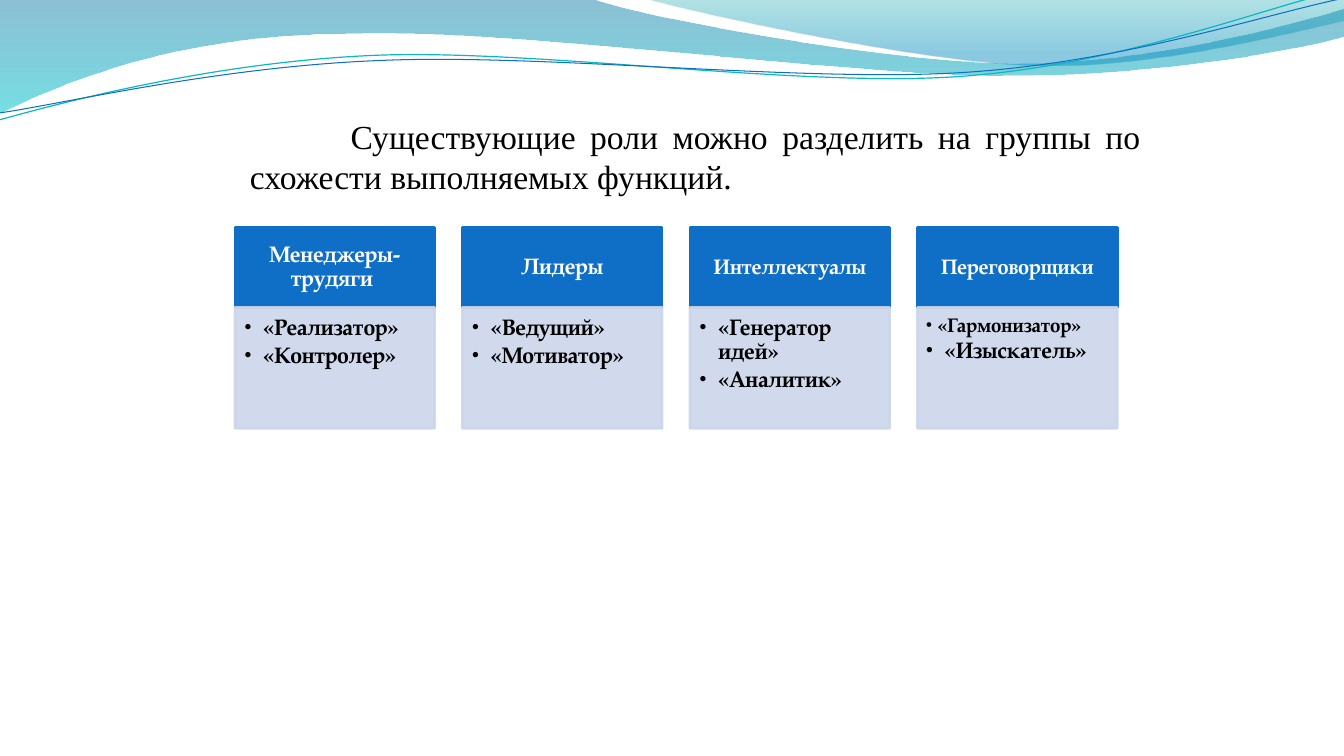
from lxml import etree
from pptx import Presentation, util as u
from pptx.dml.color import RGBColor
from pptx.enum import shapes, text
from pptx.oxml import ns

BLUE = RGBColor(0x0F, 0x6F, 0xC6)
PALE = RGBColor(0xCC, 0xD5, 0xEA)
TEAL_LINE = RGBColor(0x0A, 0xB8, 0xBF)
DEEP_BLUE = RGBColor(0x00, 0x74, 0xA1)
TURQUOISE = RGBColor(0x00, 0xC6, 0xCF)
TEAL = RGBColor(0x00, 0xA1, 0xA9)
SKY = RGBColor(0x00, 0x8B, 0xBF)
BLACK = RGBColor(0, 0, 0)
WHITE = RGBColor(255, 255, 255)

SERIF = "Times New Roman"
PALATINO = "TeX Gyre Pagella"

GRID_LEFT, GRID_WIDTH, COLUMN_WIDTH = 2.33, 8.75, 1.98
HEADER_TOP, HEADER_HEIGHT, BODY_HEIGHT = 2.26, 0.79, 1.2

WIDE_WAVE = [
    (0, -0.01), (5.87, -0.01),
    (6.34, 0.17, 8.85, 0.63, 10.11, 0.63), (11.38, 0.63, 12.78, 0.26, 13.33, 0.09),
    (13.35, 0.36),
    (13.11, 0.44, 11.6, 0.76, 9.94, 0.75), (8.29, 0.75, 5.09, 0.28, 3.43, 0.34),
    (1.72, 0.35, 0.61, 0.83, -0.01, 1.13),
]
RIGHT_WAVE = [
    (6.39, -0.01),
    (6.79, 0.11, 9.09, 0.62, 10.25, 0.65), (11.41, 0.69, 12.82, 0.32, 13.33, 0.21),
    (13.33, 0),
]
TEAL_CURVE = [
    (-0.01, 1.19), (0.64, 1.01, 2.11, 0.62, 3.69, 0.55),
    (5.27, 0.48, 7.9, 0.87, 9.5, 0.76), (11.1, 0.65, 12.52, 0.08, 13.31, -0.1),
]
BLUE_CURVE = [
    (0, 1.12), (0.63, 1.03, 2.18, 0.66, 3.78, 0.6),
    (5.37, 0.53, 7.96, 0.82, 9.55, 0.72), (11.15, 0.62, 12.55, 0.14, 13.34, -0.02),
]

GROUPS = [
    ("Менеджеры-трудяги ", 16, 0.09, [("«Реализатор»", 16, 0.19), ("«Контролер»", 16, 0.19)]),
    ("Лидеры", 16, 0.09, [("«Ведущий»", 16, 0.19), ("«Мотиватор»", 16, 0.19)]),
    ("Интеллектуалы", 15, 0.09, [("«Генератор идей»", 16, 0.19), ("«Аналитик»", 16, 0.19)]),
    ("Переговорщики", 15, 0.08, [("«Гармонизатор»", 14, 0.12), ("«Изыскатель»", 16, 0.19)]),
]


def set_opacity(shape, percentages):
    colors = shape.element.spPr.iter(ns.qn("a:srgbClr"))
    for color, percent in zip(colors, percentages):
        etree.SubElement(color, ns.qn("a:alpha")).set("val", str(percent * 1000))


def bend_segment(line, shape, segment):
    line.tag = ns.qn("a:cubicBezTo")
    end = line[0]
    for x, y in (segment[:2], segment[2:4]):
        control = etree.Element(ns.qn("a:pt"))
        control.set("x", str(u.Inches(x) - shape.left))
        control.set("y", str(u.Inches(y) - shape.top))
        end.addprevious(control)


def add_outline(slide, outline, close):
    points = [(u.Inches(segment[-2]), u.Inches(segment[-1])) for segment in outline]
    builder = slide.shapes.build_freeform(*points[0])
    builder.add_line_segments(points[1:], close=close)
    shape = builder.convert_to_shape()
    shape.shadow.inherit = False
    lines = list(shape.element.spPr.iter(ns.qn("a:lnTo")))
    for line, segment in zip(lines, outline[1:]):
        if len(segment) == 6:
            bend_segment(line, shape, segment)
    return shape


def add_wave(slide, outline, stops):
    shape = add_outline(slide, outline, True)
    shape.line.fill.background()
    shape.fill.gradient()
    shape.fill.gradient_angle = 270
    for stop, (position, color, _) in zip(shape.fill.gradient_stops, stops):
        stop.position = position
        stop.color.rgb = color
    set_opacity(shape, [opacity for _, _, opacity in stops])


def add_curve(slide, outline, color, width):
    shape = add_outline(slide, outline, False)
    shape.fill.background()
    shape.line.color.rgb = color
    shape.line.width = u.Pt(width)


def format_runs(paragraph, font_name, size, color, bold):
    for run in paragraph.runs:
        run.font.name = font_name
        run.font.size = u.Pt(size)
        run.font.color.rgb = color
        run.font.bold = bold


def set_indent(paragraph, left, first):
    properties = paragraph._p.get_or_add_pPr()
    properties.set("marL", str(u.Inches(left)))
    properties.set("indent", str(u.Inches(first)))
    return properties


def add_bullet(paragraph, indent):
    properties = set_indent(paragraph, indent, -indent)
    etree.SubElement(properties, ns.qn("a:buFont")).set("typeface", SERIF)
    etree.SubElement(properties, ns.qn("a:buChar")).set("char", "•")


def add_intro(slide):
    box = slide.shapes.add_textbox(u.Inches(2.08), u.Inches(0.17), u.Inches(9.33), u.Inches(6.42))
    frame = box.text_frame
    frame.word_wrap = True
    frame.margin_top = u.Inches(0.98)
    frame.text = "Существующие роли можно разделить на группы по схожести выполняемых функций. "
    paragraph = frame.paragraphs[0]
    set_indent(paragraph, 0.3, 1)
    paragraph.alignment = text.PP_ALIGN.JUSTIFY
    format_runs(paragraph, SERIF, 24, BLACK, False)


def add_block(slide, left, top, height, color, insets):
    shape = slide.shapes.add_shape(
        shapes.MSO_SHAPE.RECTANGLE,
        u.Inches(left), u.Inches(top), u.Inches(COLUMN_WIDTH), u.Inches(height))
    shape.shadow.inherit = False
    shape.fill.solid()
    shape.fill.fore_color.rgb = color
    shape.line.color.rgb = color
    shape.line.width = u.Pt(2)
    frame = shape.text_frame
    frame.word_wrap = True
    frame.margin_left, frame.margin_top, frame.margin_right, frame.margin_bottom = map(u.Inches, insets)
    return shape


def add_header(slide, left, title, size):
    shape = add_block(slide, left, HEADER_TOP, HEADER_HEIGHT, BLUE, (0.12, 0.07, 0.12, 0.07))
    shape.text_frame.vertical_anchor = text.MSO_ANCHOR.MIDDLE
    shape.text_frame.text = title
    paragraph = shape.text_frame.paragraphs[0]
    paragraph.alignment = text.PP_ALIGN.CENTER
    paragraph.line_spacing = 0.9
    format_runs(paragraph, PALATINO, size, WHITE, True)


def add_roles(slide, left, inset, roles):
    insets = (inset, inset, inset + 0.03, inset + 0.05)
    shape = add_block(slide, left, HEADER_TOP + HEADER_HEIGHT, BODY_HEIGHT, PALE, insets)
    set_opacity(shape, (90, 90))
    frame = shape.text_frame
    frame.vertical_anchor = text.MSO_ANCHOR.TOP
    frame.text = "\n".join(name for name, _, _ in roles)
    for paragraph, (_, size, indent) in zip(frame.paragraphs, roles):
        add_bullet(paragraph, indent)
        paragraph.alignment = text.PP_ALIGN.LEFT
        paragraph.line_spacing = 0.9
        paragraph.space_after = u.Pt(0.15 * size)
        format_runs(paragraph, PALATINO, size, BLACK, True)


def main():
    presentation = Presentation()
    presentation.slide_width = u.Inches(13.33)
    presentation.slide_height = u.Inches(7.5)
    slide = presentation.slides.add_slide(presentation.slide_layouts[6])

    add_wave(slide, WIDE_WAVE, [(0, DEEP_BLUE, 45), (1, TURQUOISE, 55)])
    add_wave(slide, RIGHT_WAVE, [(0, TEAL, 30), (0.8, SKY, 45)])
    add_curve(slide, TEAL_CURVE, TEAL_LINE, 0.85)
    add_curve(slide, BLUE_CURVE, BLUE, 0.75)
    add_intro(slide)

    pitch = (GRID_WIDTH - COLUMN_WIDTH) / (len(GROUPS) - 1)
    for column, (title, size, inset, roles) in enumerate(GROUPS):
        left = GRID_LEFT + column * pitch
        add_header(slide, left, title, size)
        add_roles(slide, left, inset, roles)

    presentation.save("out.pptx")


if __name__ == "__main__":
    main()
